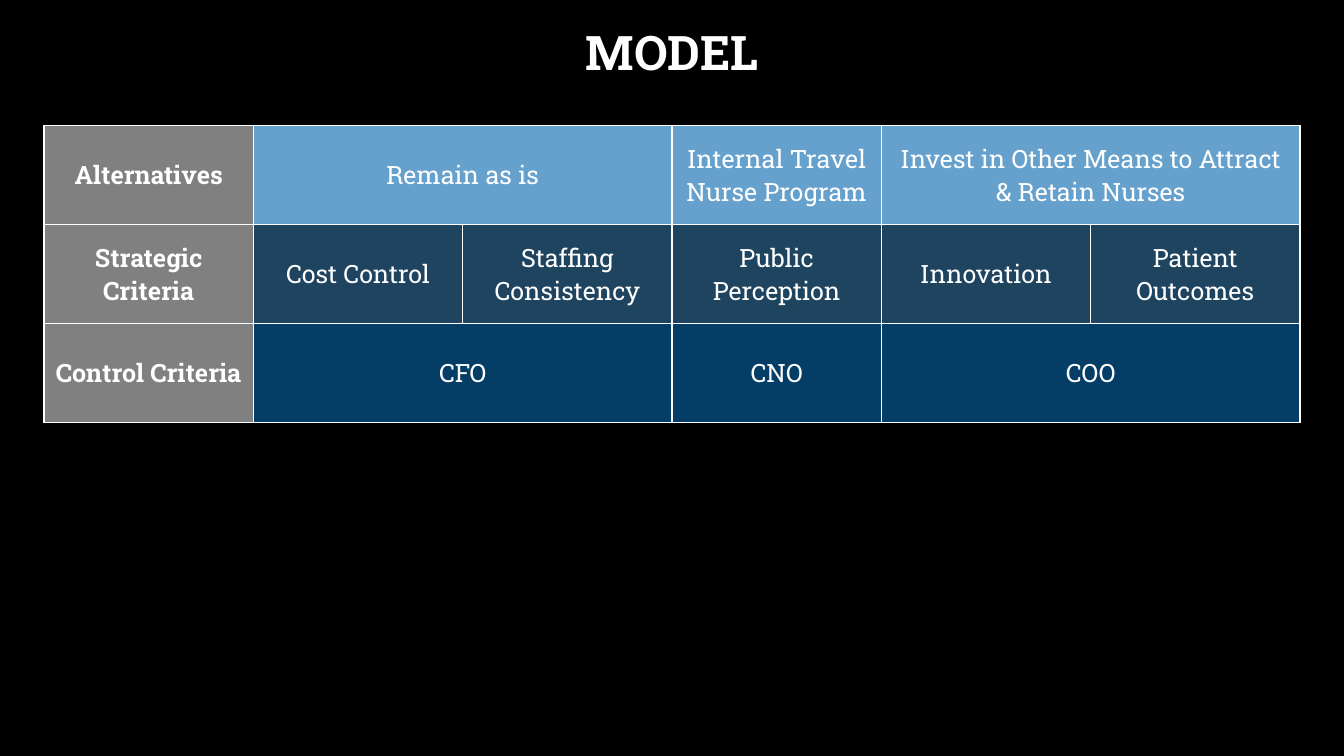
from lxml.etree import SubElement
from pptx import Presentation
from pptx.dml.color import RGBColor
from pptx.enum.text import MSO_ANCHOR, PP_ALIGN
from pptx.oxml.ns import qn
from pptx.util import Cm, Pt

COLORS = {
    "background": "000000",
    "text": "FFFFFF",
    "border": "FFFFFF",
    "header": "808080",
    "alternatives": "65A1CC",
    "strategic": "1F445F",
    "control": "043D66",
}

# Each row: header, colour name, then (text, columns spanned) for every cell.
MODEL_ROWS = [
    ("Alternatives", "alternatives", [
        ("Remain as is", 2),
        ("Internal Travel Nurse Program", 1),
        ("Invest in Other Means to Attract & Retain Nurses", 2),
    ]),
    ("Strategic Criteria", "strategic", [
        ("Cost Control", 1),
        ("Staffing Consistency", 1),
        ("Public Perception", 1),
        ("Innovation", 1),
        ("Patient Outcomes", 1),
    ]),
    ("Control Criteria", "control", [("CFO", 2), ("CNO", 1), ("COO", 2)]),
]
COLUMN_COUNT = 6


class SlideBuilder:
    def __init__(self, presentation, font_name):
        self.font_name = font_name
        title_only_layout = presentation.slide_layouts[5]
        self.slide = presentation.slides.add_slide(title_only_layout)

    def background(self, color):
        fill = self.slide.background.fill
        fill.solid()
        fill.fore_color.rgb = RGBColor.from_string(COLORS[color])

    def centered_text(self, text_frame, text, size, bold):
        text_frame.text = text
        paragraph = text_frame.paragraphs[0]
        paragraph.alignment = PP_ALIGN.CENTER
        font = paragraph.font
        font.name = self.font_name
        font.size = Pt(size)
        font.bold = bold
        font.color.rgb = RGBColor.from_string(COLORS["text"])
        return paragraph

    def title(self, text, left, top, width, height):
        title = self.slide.shapes.title
        title.left, title.top = Cm(left), Cm(top)
        title.width, title.height = Cm(width), Cm(height)
        title.text_frame.vertical_anchor = MSO_ANCHOR.MIDDLE
        paragraph = self.centered_text(title.text_frame, text, size=34, bold=True)
        paragraph.line_spacing = 0.9

    def border(self, cell):
        """Draw a thin line on all four sides; lines must precede the fill."""
        properties = cell._tc.get_or_add_tcPr()
        for side in ("a:lnL", "a:lnR", "a:lnT", "a:lnB"):
            line = SubElement(properties, qn(side), w=str(Pt(1)))
            solid_fill = SubElement(line, qn("a:solidFill"))
            SubElement(solid_fill, qn("a:srgbClr"), val=COLORS["border"])

    def cell(self, cell, text, color, bold):
        cell.vertical_anchor = MSO_ANCHOR.MIDDLE
        cell.fill.solid()
        cell.fill.fore_color.rgb = RGBColor.from_string(COLORS[color])
        self.centered_text(cell.text_frame, text, size=18, bold=bold)

    def table(self, rows, left, top, width, height):
        """Fill a grid whose cells may each span several columns."""
        table = self.slide.shapes.add_table(
            len(rows), COLUMN_COUNT, Cm(left), Cm(top), Cm(width), Cm(height)
        ).table
        for cell in table.iter_cells():
            self.border(cell)
        for row, (header, color, entries) in enumerate(rows):
            self.cell(table.cell(row, 0), header, "header", bold=True)
            column = 1
            for text, span in entries:
                cell = table.cell(row, column)
                if span > 1:
                    cell.merge(table.cell(row, column + span - 1))
                self.cell(cell, text, color, bold=False)
                column += span


def main():
    presentation = Presentation()
    presentation.slide_width = Cm(33.87)
    presentation.slide_height = Cm(19.05)
    builder = SlideBuilder(presentation, "Roboto Slab")
    builder.background("background")
    builder.title("MODEL", left=2.57, top=0.43, width=28.75, height=1.9)
    builder.table(MODEL_ROWS, left=1.11, top=3.17, width=31.65, height=7.47)
    presentation.save("out.pptx")


if __name__ == "__main__":
    main()
